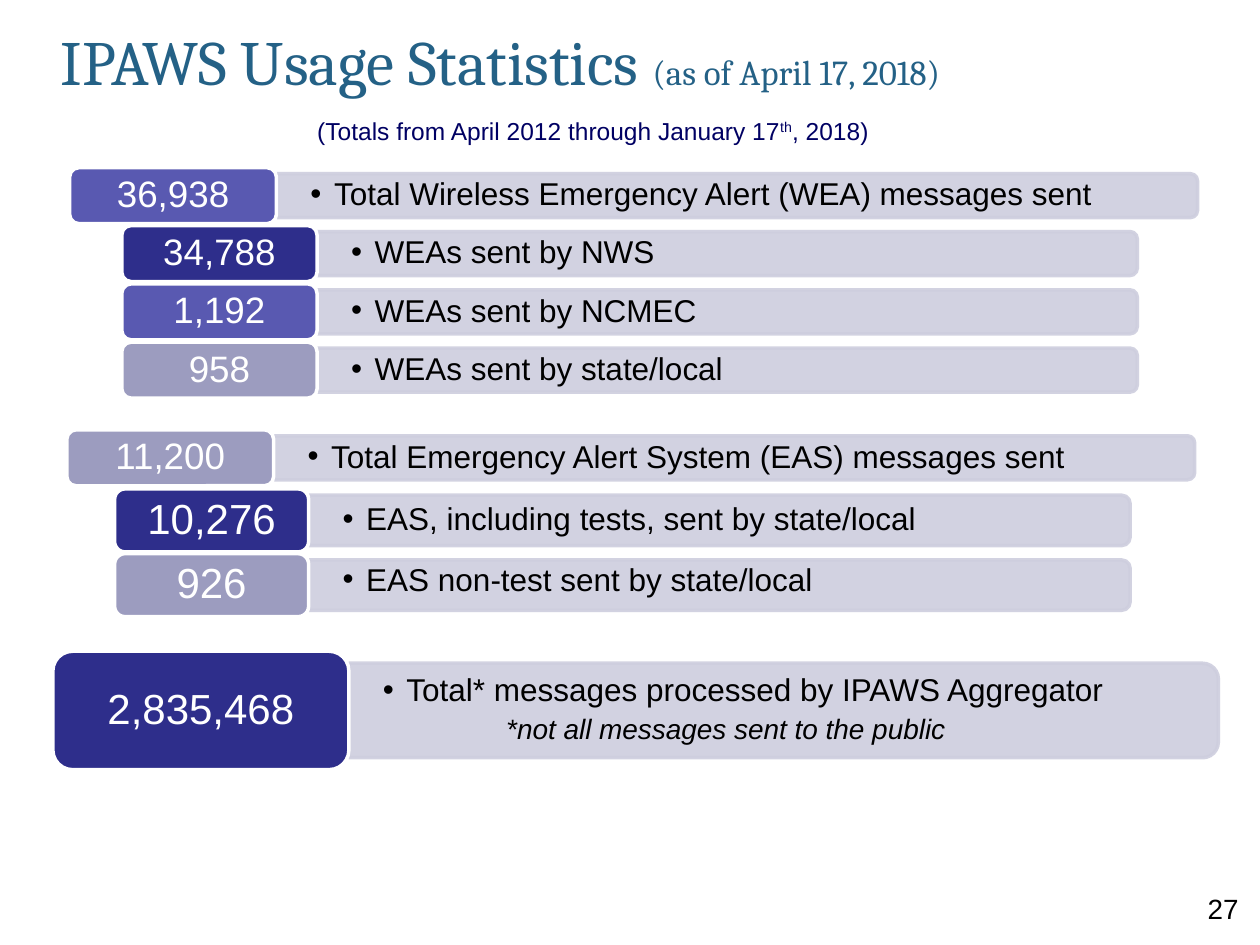
import pptx
import pptx.util
import pptx.dml.color
import pptx.enum.shapes
import pptx.enum.text
import pptx.oxml.ns
import lxml.etree

Pt = pptx.util.Pt
SHAPE = pptx.enum.shapes.MSO_SHAPE
ALIGN = pptx.enum.text.PP_ALIGN
ANCHOR = pptx.enum.text.MSO_ANCHOR
NAVY, VIOLET, LILAC, PALE = "2E2E8B", "5959B1", "9C9CBF", "CECEDE"


def color(value):
    return pptx.dml.color.RGBColor.from_string(value)


def add_xml(parent, tag, **attrs):
    return lxml.etree.SubElement(parent, pptx.oxml.ns.qn(tag), attrs)


def add_run(p, text, size, fill="000000", font="Arial", italic=False, baseline=None):
    r = p.add_run()
    r.text = text
    r.font.size = Pt(size)
    r.font.name = font
    r.font.italic = italic
    r.font.color.rgb = color(fill)
    if baseline:
        r._r.get_or_add_rPr().set("baseline", str(baseline))
    return r


def set_frame(tf, margins=(0, 0), anchor=ANCHOR.MIDDLE, wrap=True):
    tf.auto_size = pptx.enum.text.MSO_AUTO_SIZE.NONE
    tf.word_wrap = wrap
    tf.vertical_anchor = anchor
    tf.margin_left = tf.margin_right = Pt(margins[0])
    tf.margin_top = tf.margin_bottom = Pt(margins[1])
    return tf.paragraphs[0]


def add_text_box(s, left, top, width, height, **frame):
    sp = s.shapes.add_textbox(Pt(left), Pt(top), Pt(width), Pt(height))
    return set_frame(sp.text_frame, **frame)


def add_block(s, kind, left, cy, width, height, fill, line):
    sp = s.shapes.add_shape(kind, Pt(left), Pt(cy - height / 2), Pt(width), Pt(height))
    sp.shadow.inherit = False
    sp.fill.solid()
    sp.fill.fore_color.rgb = color(fill)
    sp.line.color.rgb = color(line)
    sp.line.width = Pt(2)
    return sp


def add_bar(s, left, cy, width, height):
    sp = add_block(s, SHAPE.ROUND_2_SAME_RECTANGLE, left + (width - height) / 2, cy,
                   height, width, PALE, PALE)
    sp.rotation = 90
    for clr in sp._element.spPr.iter(pptx.oxml.ns.qn("a:srgbClr")):
        add_xml(clr, "a:alpha", val="90000")


def add_bullet_text(s, text, left, cy, width):
    p = add_text_box(s, left, cy - 13, width, 26, margins=(19.4, 0))
    pPr = p._p.get_or_add_pPr()
    pPr.set("marL", str(Pt(13.5)))
    pPr.set("indent", str(-Pt(13.5)))
    p.line_spacing = 0.9
    add_xml(pPr, "a:buFont", typeface="Arial")
    add_xml(pPr, "a:buChar", char="•")
    add_run(p, text, 18)


def add_stat(s, value, label, left, cy, box, bar, fill, size=21, shift=0):
    add_bar(s, left + box[0], cy, *bar)
    add_bullet_text(s, label, left + box[0], cy + shift, bar[0])
    sp = add_block(s, SHAPE.ROUNDED_RECTANGLE, left, cy, *box, fill, "FFFFFF")
    p = set_frame(sp.text_frame)
    p.alignment = ALIGN.CENTER
    p.line_spacing = 0.9
    add_run(p, value, size, "FFFFFF")


def add_title(s):
    sp = s.shapes.title
    sp.left, sp.top, sp.width, sp.height = Pt(27.4), Pt(6.5), Pt(666), Pt(59.8)
    p = set_frame(sp.text_frame, margins=(7.2, 3.6))
    p.alignment = ALIGN.LEFT
    p.line_spacing = 0.95
    add_run(p, "IPAWS Usage Statistics ", 36, "246186", "Cambria")
    add_run(p, "(as of April 17, 2018)", 20, "246186", "Cambria")


def add_notes_on_totals(s):
    p = add_text_box(s, 174.2, 62.6, 332, 24.5, margins=(7.2, 3.6),
                     anchor=ANCHOR.TOP, wrap=False)
    add_run(p, "(Totals from April 2012 through January 17", 14, "000063")
    add_run(p, "th", 14, "000063", baseline=30000)
    add_run(p, ", 2018)", 14, "000063")
    p = add_text_box(s, 282.2, 404.6, 268.6, 25.2, margins=(7.2, 3.6),
                     anchor=ANCHOR.TOP, wrap=False)
    p.line_spacing = 0.93
    add_run(p, "*not all messages sent to the public", 16, italic=True)


def add_page_number(s):
    p = add_text_box(s, 599.8, 509.8, 108, 23.8, anchor=ANCHOR.TOP)
    p.alignment = ALIGN.RIGHT
    add_run(p, "27", 15.9)


def main():
    prs = pptx.Presentation()
    prs.slide_width, prs.slide_height = Pt(720), Pt(540)
    s = prs.slides.add_slide(prs.slide_layouts[5])
    add_title(s)

    total_box, total_bar = (118.2, 32), (526.3, 25.2)
    add_stat(s, "36,938", "Total Wireless Emergency Alert (WEA) messages sent",
             39.8, 111.8, total_box, total_bar, VIOLET)
    wea = [("34,788", "NWS", NAVY), ("1,192", "NCMEC", VIOLET), ("958", "state/local", LILAC)]
    for i, (value, sender, fill) in enumerate(wea):
        add_stat(s, value, "WEAs sent by " + sender, 69.6, 144.9 + 33.3 * i,
                 (111.6, 32), (468.7, 25.2), fill)

    add_stat(s, "11,200", "Total Emergency Alert System (EAS) messages sent",
             38.2, 261.6, total_box, total_bar, LILAC)
    eas = [("10,276", "EAS, including tests, sent by state/local", NAVY, 0),
           ("926", "EAS non-test sent by state/local", LILAC, -2.5)]
    for i, (value, label, fill, shift) in enumerate(eas):
        add_stat(s, value, label, 65.5, 297.4 + 37 * i, (110.9, 36), (469.4, 28.8),
                 fill, 24, shift)

    add_stat(s, "2,835,468", "Total* messages processed by IPAWS Aggregator",
             30.2, 406, (169.2, 67.7), (496.8, 54), NAVY, 24, -11)
    add_notes_on_totals(s)
    add_page_number(s)
    prs.save("out.pptx")


if __name__ == "__main__":
    main()
